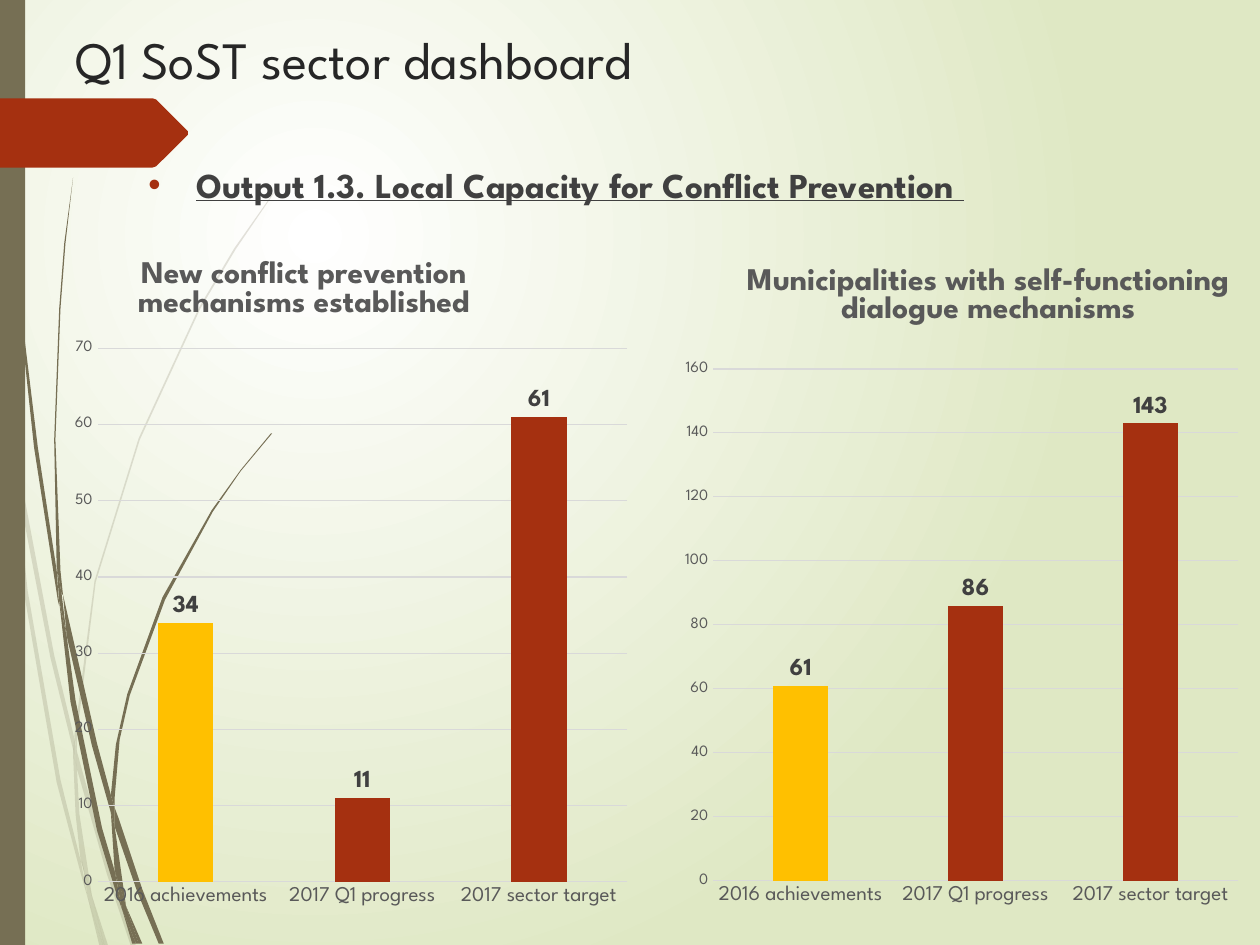
"""Build the first-quarter sector dashboard slide with two column charts."""
from dataclasses import dataclass
from typing import Any
from lxml import etree
from pptx import Presentation
from pptx.chart.data import CategoryChartData
from pptx.dml.color import RGBColor
from pptx.enum.chart import XL_CHART_TYPE, XL_LABEL_POSITION, XL_TICK_MARK
from pptx.enum.shapes import MSO_SHAPE
from pptx.enum.text import MSO_ANCHOR, PP_ALIGN
from pptx.oxml.ns import qn
from pptx.util import Inches, Pt

COLUMNS, OUTSIDE_END = XL_CHART_TYPE.COLUMN_CLUSTERED, XL_LABEL_POSITION.OUTSIDE_END
NO_TICK, RECTANGLE = XL_TICK_MARK.NONE, MSO_SHAPE.RECTANGLE
MIDDLE, TOP = MSO_ANCHOR.MIDDLE, MSO_ANCHOR.TOP
LEFT, JUSTIFY = PP_ALIGN.LEFT, PP_ALIGN.JUSTIFY
GRID_COLUMNS, GRID_ROWS, CELL = 1000, 750, Inches(0.01)
Points = list[tuple[int, int]]


@dataclass(frozen=True)
class Theme:
    font: str = "League Spartan"
    white: str = "FFFFFF"
    meadow: str = "DFE8C4"
    olive: str = "766F54"
    rust: str = "A53010"
    amber: str = "FFC000"
    heading: str = "262626"
    body: str = "404040"
    axis: str = "595959"
    grid: str = "D9D9D9"
    title_size: int = 30
    output_size: int = 20
    chart_title_size: int = 18
    label_size: int = 14
    category_size: int = 12
    value_size: int = 9


@dataclass(frozen=True)
class Box:
    column: int
    row: int
    columns: int
    rows: int

    def lengths(self) -> list[int]:
        return [part * CELL for part in (self.column, self.row, self.columns, self.rows)]


@dataclass(frozen=True)
class ColumnChart:
    box: Box
    title: str
    values: tuple[int, ...]
    maximum: int
    step: int
    number_format: str
    title_place: dict[str, float]
    plot_place: dict[str, float]


THEME = Theme()
CATEGORIES = ("2016 achievements", "2017 Q1 progress", "2017 sector target")
CHARTS = (
    ColumnChart(Box(50, 183, 457, 550), "New conflict prevention mechanisms established",
                (34, 11, 61), 70, 10, "General", {"x": 0.12, "y": 0.03},
                {"x": 0.06, "y": 0.17, "w": 0.92, "h": 0.77}),
    ColumnChart(Box(504, 183, 496, 549), "Municipalities with self-functioning dialogue mechanisms",
                (61, 86, 143), 160, 20, "#,##0", {"x": 0.17, "y": 0.04},
                {"x": 1 / 8, "y": 0.2, "w": 0.84, "h": 0.74}),
)
PALE_WISPS: list[Points] = [
    [(8, 350), (6, 322), (0, 282), (0, 299), (7, 344)],
    [(40, 522), (59, 599), (59, 586), (43, 520), (10, 345), (12, 376)],
    [(64, 607), (61, 596), (61, 610), (85, 694), (104, 751), (108, 751), (88, 692)],
    [(83, 751), (86, 751), (73, 711)],
    [(64, 683), (48, 619), (22, 469), (12, 376), (8, 350), (19, 470), (45, 621), (64, 693), (70, 714)],
    [(58, 599), (60, 646), (64, 683), (73, 711), (63, 646), (61, 608)],
    [(61, 584), (76, 462), (111, 349), (159, 245), (187, 198), (217, 154), (217, 153),
     (186, 197), (158, 244), (110, 348), (75, 461), (59, 584), (61, 596)],
    [(70, 714), (79, 751), (82, 751)],
    [(61, 608), (61, 596), (59, 586), (58, 599)],
    [(67, 692), (65, 683), (70, 714), (82, 751), (83, 751), (73, 711)],
]
DARK_WISPS: list[Points] = [
    [(5, 110), (14, 233), (27, 355), (46, 477), (47, 481), (45, 453), (30, 355), (15, 232),
     (6, 109), (4, 48), (3, 0), (2, 0), (3, 48)],
    [(73, 592), (88, 645), (88, 631), (77, 590), (50, 472), (53, 505)],
    [(94, 649), (91, 641), (91, 656), (109, 708), (126, 749), (130, 749), (113, 706)],
    [(91, 691), (81, 657), (60, 556), (53, 505), (47, 477), (56, 557), (77, 659), (92, 708), (97, 722)],
    [(50, 472), (48, 453), (44, 349), (48, 245), (52, 193), (58, 141), (51, 193), (47, 245),
     (43, 349), (45, 449), (49, 472)],
    [(110, 749), (113, 749), (100, 719)],
    [(47, 477), (53, 505), (49, 472), (45, 449)],
    [(91, 633), (95, 587), (103, 552), (131, 476), (169, 406), (191, 374), (216, 344), (215, 344),
     (191, 373), (168, 405), (129, 474), (101, 551), (92, 591), (88, 631), (91, 641)],
    [(97, 722), (105, 749), (108, 749)],
    [(88, 645), (91, 691), (100, 719), (91, 656)],
    [(88, 645), (91, 656), (91, 641), (88, 631)],
    [(96, 706), (91, 691), (97, 722), (108, 749), (110, 749), (100, 719)],
]
ARROW: Points = [(0, 78), (121, 78), (124, 79), (149, 104), (149, 107), (124, 132), (121, 133), (0, 133)]


def apply(target: Any, **formats: Any) -> None:
    for name, value in formats.items():
        setattr(target, name, value)


def style_font(font: Any, size: int, color: str, **formats: Any) -> None:
    apply(font, name=THEME.font, size=Pt(size), **formats)
    font.color.rgb = RGBColor.from_string(color)


def paint(shape: Any, color: str, opacity: int = 100) -> None:
    shape.shadow.inherit = False
    shape.fill.solid()
    shape.fill.fore_color.rgb = RGBColor.from_string(color)
    shape.line.fill.background()
    if opacity < 100:
        swatch = shape.element.spPr.find(f"{qn('a:solidFill')}/{qn('a:srgbClr')}")
        etree.SubElement(swatch, qn("a:alpha"), val=str(opacity * 1000))


def draw_outline(slide: Any, points: Points, color: str, opacity: int = 100) -> None:
    builder = slide.shapes.build_freeform(*points[0], scale=CELL)
    builder.add_line_segments(points[1:], close=True)
    paint(builder.convert_to_shape(), color, opacity)


def draw_background(slide: Any) -> None:
    fill = slide.background.fill
    fill.gradient()
    for stop, color in zip(fill.gradient_stops, (THEME.white, THEME.meadow)):
        stop.color.rgb = RGBColor.from_string(color)
    gradient = slide.element.find(f".//{qn('a:gradFill')}")
    gradient.remove(gradient.find(qn("a:lin")))
    circle = etree.SubElement(gradient, qn("a:path"), path="circle")
    etree.SubElement(circle, qn("a:fillToRect"), l="50000", t="50000", r="100000", b="100000")


def draw_text(shape: Any, box: Box, text: str, anchor: Any, alignment: Any, **font: Any) -> Any:
    apply(shape, **dict(zip(("left", "top", "width", "height"), box.lengths())))
    apply(shape.text_frame, text=text, word_wrap=True, vertical_anchor=anchor)
    paragraph = shape.text_frame.paragraphs[0]
    paragraph.alignment = alignment
    style_font(paragraph.runs[0].font, **font)
    return paragraph


def add_bullet(paragraph: Any, color: str) -> None:
    paragraph.space_before = Pt(10)
    properties = paragraph._p.get_or_add_pPr()
    apply_indent = {"marL": Inches(0.38), "indent": -Inches(0.38)}
    for name, length in apply_indent.items():
        properties.set(name, str(length))
    etree.SubElement(etree.SubElement(properties, qn("a:buClr")), qn("a:srgbClr"), val=color)
    etree.SubElement(properties, qn("a:buFont"), typeface="Arial")
    etree.SubElement(properties, qn("a:buChar"), char="•")


def place(parent: Any, shares: dict[str, float], index: int) -> None:
    layout = parent.find(qn("c:layout"))
    if layout is None:
        layout = etree.Element(qn("c:layout"))
        parent.insert(index, layout)
    manual = etree.SubElement(layout, qn("c:manualLayout"))
    target = {"layoutTarget": "inner"} if "w" in shares else {}
    for name, value in {**target, "xMode": "edge", "yMode": "edge", **shares}.items():
        etree.SubElement(manual, qn(f"c:{name}"), val=str(value))


def draw_chart(slide: Any, item: ColumnChart) -> None:
    data = CategoryChartData(number_format=item.number_format)
    data.categories = CATEGORIES
    data.add_series("Series 1", item.values)
    chart = slide.shapes.add_chart(COLUMNS, *item.box.lengths(), data).chart
    apply(chart, has_legend=False, has_title=True)
    style_font(chart.font, 10, THEME.axis)
    title = chart.chart_title
    title.text_frame.text = item.title
    style_font(title.text_frame.paragraphs[0].runs[0].font, THEME.chart_title_size, THEME.axis, bold=True)
    place(title._element, item.title_place, 1)
    place(chart._chartSpace.find(f".//{qn('c:plotArea')}"), item.plot_place, 0)
    category, value, plot = chart.category_axis, chart.value_axis, chart.plots[0]
    for axis, size in ((category, THEME.category_size), (value, THEME.value_size)):
        apply(axis, major_tick_mark=NO_TICK, minor_tick_mark=NO_TICK)
        style_font(axis.tick_labels.font, size, THEME.axis)
    apply(value, minimum_scale=0, maximum_scale=item.maximum, major_unit=item.step)
    value.format.line.fill.background()
    for line in (category.format.line, value.major_gridlines.format.line):
        line.width = Pt(0.75)
        line.color.rgb = RGBColor.from_string(THEME.grid)
    apply(plot, gap_width=219, overlap=-27, vary_by_categories=False, has_data_labels=True)
    for labels in (value.tick_labels, plot.data_labels):
        apply(labels, number_format=item.number_format, number_format_is_linked=False)
    apply(plot.data_labels, show_value=True, position=OUTSIDE_END)
    style_font(plot.data_labels.font, THEME.label_size, THEME.body, bold=True)
    series = plot.series[0]
    for part, color in ((series, THEME.rust), (series.points[0], THEME.amber)):
        part.format.fill.solid()
        part.format.fill.fore_color.rgb = RGBColor.from_string(color)


def main() -> None:
    presentation = Presentation()
    apply(presentation, slide_width=GRID_COLUMNS * CELL, slide_height=GRID_ROWS * CELL)
    slide = presentation.slides.add_slide(presentation.slide_layouts[5])
    draw_background(slide)
    for wisps, opacity in ((PALE_WISPS, 20), (DARK_WISPS, 100)):
        for wisp in wisps:
            draw_outline(slide, wisp, THEME.olive, opacity)
    paint(slide.shapes.add_shape(RECTANGLE, *Box(0, 0, 20, GRID_ROWS).lengths()), THEME.olive)
    draw_outline(slide, ARROW, THEME.rust)
    title = slide.shapes.title
    draw_text(title, Box(50, 17, 933, 75), "Q1 SoST sector dashboard", MIDDLE, LEFT,
              size=THEME.title_size, color=THEME.heading)
    title.text_frame.margin_bottom = Inches(0.21)
    box = Box(108, 125, 825, 521)
    output = draw_text(slide.shapes.add_textbox(*box.lengths()), box,
                       "Output 1.3. Local Capacity for Conflict Prevention ", TOP, JUSTIFY,
                       size=THEME.output_size, color=THEME.body, bold=True, underline=True)
    add_bullet(output, THEME.rust)
    for item in CHARTS:
        draw_chart(slide, item)
    presentation.save("out.pptx")


if __name__ == "__main__":
    main()
